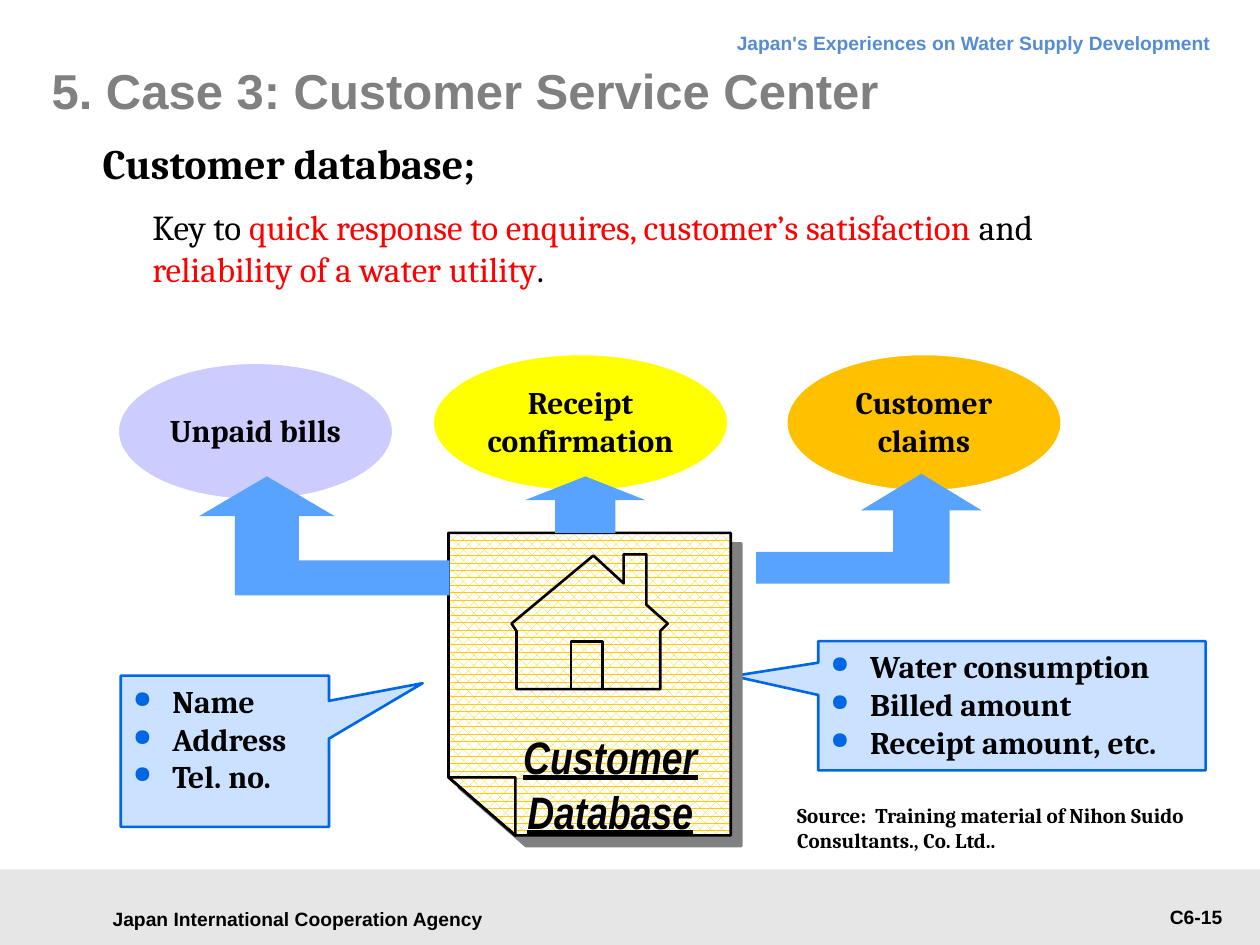
from lxml import etree
from pptx import Presentation
from pptx.dml.color import RGBColor
from pptx.enum.dml import MSO_PATTERN
from pptx.enum.shapes import MSO_SHAPE
from pptx.enum.text import MSO_ANCHOR, PP_ALIGN
from pptx.oxml.ns import qn
from pptx.util import Pt

LEFT, CENTER, RIGHT = PP_ALIGN.LEFT, PP_ALIGN.CENTER, PP_ALIGN.RIGHT
TOP, MIDDLE = MSO_ANCHOR.TOP, MSO_ANCHOR.MIDDLE
RECTANGLE, OVAL = MSO_SHAPE.RECTANGLE, MSO_SHAPE.OVAL
CALLOUT, UP_ARROW = MSO_SHAPE.RECTANGULAR_CALLOUT, MSO_SHAPE.UP_ARROW
DOTTED = MSO_PATTERN.PERCENT_60

BLACK = RGBColor(0x00, 0x00, 0x00)
WHITE = RGBColor(0xFF, 0xFF, 0xFF)
RED = RGBColor(0xFF, 0x00, 0x00)
GRAY = RGBColor(0x80, 0x80, 0x80)
PALE_GRAY = RGBColor(0xE6, 0xE6, 0xE6)
HEADER_BLUE = RGBColor(0x54, 0x8D, 0xD4)
ARROW_BLUE = RGBColor(0x58, 0xA3, 0xFF)
CALLOUT_BLUE = RGBColor(0xCA, 0xE2, 0xFF)
EDGE_BLUE = RGBColor(0x00, 0x67, 0xE4)
LAVENDER = RGBColor(0xCC, 0xCC, 0xFF)
YELLOW = RGBColor(0xFF, 0xFF, 0x00)
AMBER = RGBColor(0xFF, 0xC0, 0x00)
GOLD = RGBColor(0xFF, 0xCC, 0x00)


class SlideBuilder:
    """Draws styled elements on one slide, with lengths in points."""

    body_font = "Cambria"
    label_font = "Arial"

    def __init__(self, slide):
        self.slide = slide
        self.shapes = slide.shapes

    def format_run(self, run, size, font, color=BLACK, bold=True):
        run.font.size = Pt(size)
        run.font.name = font
        run.font.color.rgb = color
        run.font.bold = bold

    def set_insets(self, frame, left, top, right, bottom):
        frame.margin_left, frame.margin_top = Pt(left), Pt(top)
        frame.margin_right, frame.margin_bottom = Pt(right), Pt(bottom)

    def title(self, text, box):
        heading = self.shapes.title
        heading.left, heading.top, heading.width, heading.height = map(Pt, box)
        frame = heading.text_frame
        frame.text = text
        frame.vertical_anchor = MIDDLE
        self.set_insets(frame, 0, 0, 0, 0)
        frame.paragraphs[0].alignment = LEFT
        self.format_run(frame.paragraphs[0].runs[0], 28, self.label_font, GRAY)

    def text(self, parts, box, size, font=body_font, align=LEFT,
             anchor=TOP, wrap=True, bold=True):
        frame = self.shapes.add_textbox(*map(Pt, box)).text_frame
        frame.word_wrap = wrap
        frame.vertical_anchor = anchor
        frame.paragraphs[0].alignment = align
        for wording, color in parts:
            run = frame.paragraphs[0].add_run()
            run.text = wording
            self.format_run(run, size, font, color, bold)
        return frame

    def paint(self, shape, fill, line=None, width=1.5):
        shape.shadow.inherit = False
        if fill is None:
            shape.fill.background()
        else:
            shape.fill.solid()
            shape.fill.fore_color.rgb = fill
        if line is None:
            shape.line.fill.background()
        else:
            shape.line.color.rgb = line
            shape.line.width = Pt(width)

    def shape(self, kind, box, fill, line=None, width=1.5, adjust=()):
        shape = self.shapes.add_shape(kind, *map(Pt, box))
        for index, value in enumerate(adjust):
            shape.adjustments[index] = value
        self.paint(shape, fill, line, width)
        return shape

    def bubble(self, text, box, fill):
        frame = self.shape(OVAL, box, fill, WHITE, 2).text_frame
        frame.text = text
        frame.word_wrap = True
        frame.vertical_anchor = MIDDLE
        self.set_insets(frame, 0, 0, 0, 2)
        frame.paragraphs[0].alignment = CENTER
        self.format_run(frame.paragraphs[0].runs[0], 18, self.body_font)

    def callout(self, items, box, tail):
        frame = self.shape(CALLOUT, box, CALLOUT_BLUE, EDGE_BLUE, adjust=tail).text_frame
        frame.text = "\n".join(items)
        frame.word_wrap = True
        frame.vertical_anchor = TOP
        for paragraph in frame.paragraphs:
            paragraph.alignment = LEFT
            self.bullet(paragraph)
            self.format_run(paragraph.runs[0], 18, self.body_font)

    def bullet(self, paragraph):
        properties = paragraph._p.get_or_add_pPr()
        properties.set("marL", str(Pt(22.5)))
        properties.set("indent", str(-Pt(22.5)))
        tint = etree.SubElement(properties, qn("a:buClr"))
        etree.SubElement(tint, qn("a:srgbClr"), val=str(EDGE_BLUE))
        etree.SubElement(properties, qn("a:buSzPct"), val="75000")
        etree.SubElement(properties, qn("a:buChar"), char="●")

    def outline(self, points, fill=None, line=None):
        start, *rest = [(Pt(x), Pt(y)) for x, y in points]
        builder = self.shapes.build_freeform(*start)
        builder.add_line_segments(rest, close=True)
        shape = builder.convert_to_shape()
        self.paint(shape, fill, line)
        return shape

    def page(self, points):
        sheet = self.outline(points, WHITE, BLACK)
        sheet.fill.patterned()
        sheet.fill.pattern = DOTTED
        sheet.fill.fore_color.rgb = GOLD
        sheet.fill.back_color.rgb = WHITE
        effects = sheet._element.spPr.find(qn("a:effectLst"))
        shadow = etree.SubElement(effects, qn("a:outerShdw"), dist=str(Pt(8.5)),
                                  dir="2700000", algn="ctr", rotWithShape="0")
        etree.SubElement(shadow, qn("a:srgbClr"), val=str(GRAY))

    def bent_arrow(self, tip, head, stem, shoulder, tail, shaft):
        x, y = tip
        upper, lower = shaft
        side = 1 if tail > x else -1
        self.outline([
            (x, y), (x + side * head, shoulder), (x + side * stem, shoulder),
            (x + side * stem, upper), (tail, upper), (tail, lower),
            (x - side * stem, lower), (x - side * stem, shoulder),
            (x - side * head, shoulder)], ARROW_BLUE)


def main():
    deck = Presentation()
    deck.slide_width, deck.slide_height = Pt(720), Pt(540)
    build = SlideBuilder(deck.slides.add_slide(deck.slide_layouts[5]))

    build.shape(RECTANGLE, (0, 496.8, 720, 43.2), PALE_GRAY)
    build.text([("Japan International Cooperation Agency", BLACK)],
               (51, 512.6, 238.5, 24.5), 11, build.label_font, CENTER, MIDDLE)
    running_head = build.text([("Japan's Experiences on Water Supply Development", HEADER_BLUE)],
                              (196, 9.4, 503, 27.4), 11, build.label_font, RIGHT)
    running_head.paragraphs[0].line_spacing = Pt(18)
    build.text([("C6-15", BLACK)], (592.6, 514, 113, 21), 11, build.label_font, RIGHT)

    build.title("5. Case 3: Customer Service Center", (29.5, 30.2, 648, 42.5))
    build.text([("Customer database;", BLACK)], (51.5, 75, 240, 36), 24, wrap=False)
    message = build.text([
        ("Key to ", BLACK), ("quick response to enquires, customer’s satisfaction", RED),
        (" and", BLACK), (" reliability of a water utility", RED), (".", BLACK),
    ], (51.8, 111.6, 645.8, 82.8), 20, bold=False)
    build.set_insets(message, 35.3, 5.8, 25.2, 5.8)

    build.callout(["Water consumption", "Billed amount", "Receipt amount, etc."],
                  (467.6, 366.4, 221.3, 73.8), (-0.72, -0.23))
    build.callout(["Name", "Address", "Tel. no."],
                  (69, 386.1, 119, 86.4), (0.95, -0.45))

    build.page([(294.5, 477.4), (256.3, 444.2), (256.3, 304.5),
                (417.6, 304.5), (417.6, 477.4)])
    fold = [(256.3, 444.2), (294.5, 444.2), (294.5, 477.4)]
    house = [(295.2, 360.7), (295.2, 393.8), (377.3, 393.8), (377.3, 360.7),
             (381.6, 356.4), (369.4, 345.6), (369.4, 316.8), (356.4, 316.8),
             (356.4, 333.4), (339.1, 317.5), (292.3, 356.4)]
    door = [(326.2, 393.8), (326.2, 366.5), (344.2, 366.5), (344.2, 393.8)]
    for drawing in (fold, house, door):
        build.outline(drawing, line=BLACK)
    database = build.text([("Customer Database", BLACK)], (280.8, 413.3, 136, 61.2),
                          26, "Arial Narrow", CENTER)
    database.paragraphs[0].runs[0].font.italic = True
    database.paragraphs[0].runs[0].font.underline = True

    build.bubble("Unpaid bills", (67, 207, 158, 79), LAVENDER)
    build.bubble("Customer claims", (449, 202, 158, 79), AMBER)
    build.bubble("Receipt confirmation", (247, 202, 169.5, 79), YELLOW)

    build.shape(UP_ARROW, (300, 272.2, 69, 32.4), ARROW_BLUE, adjust=(0.5, 0.42))
    build.bent_arrow((526.5, 270.7), 34.4, 16.2, 291.6, 432, (315.4, 333.5))
    build.bent_arrow((152.5, 272.2), 38.8, 18.3, 295, 257, (320.2, 340.3))

    build.text([("Source:  Training material of Nihon Suido Consultants., Co. Ltd..", BLACK)],
               (448.4, 455, 252.7, 36.7), 12)
    deck.save("out.pptx")


if __name__ == "__main__":
    main()
